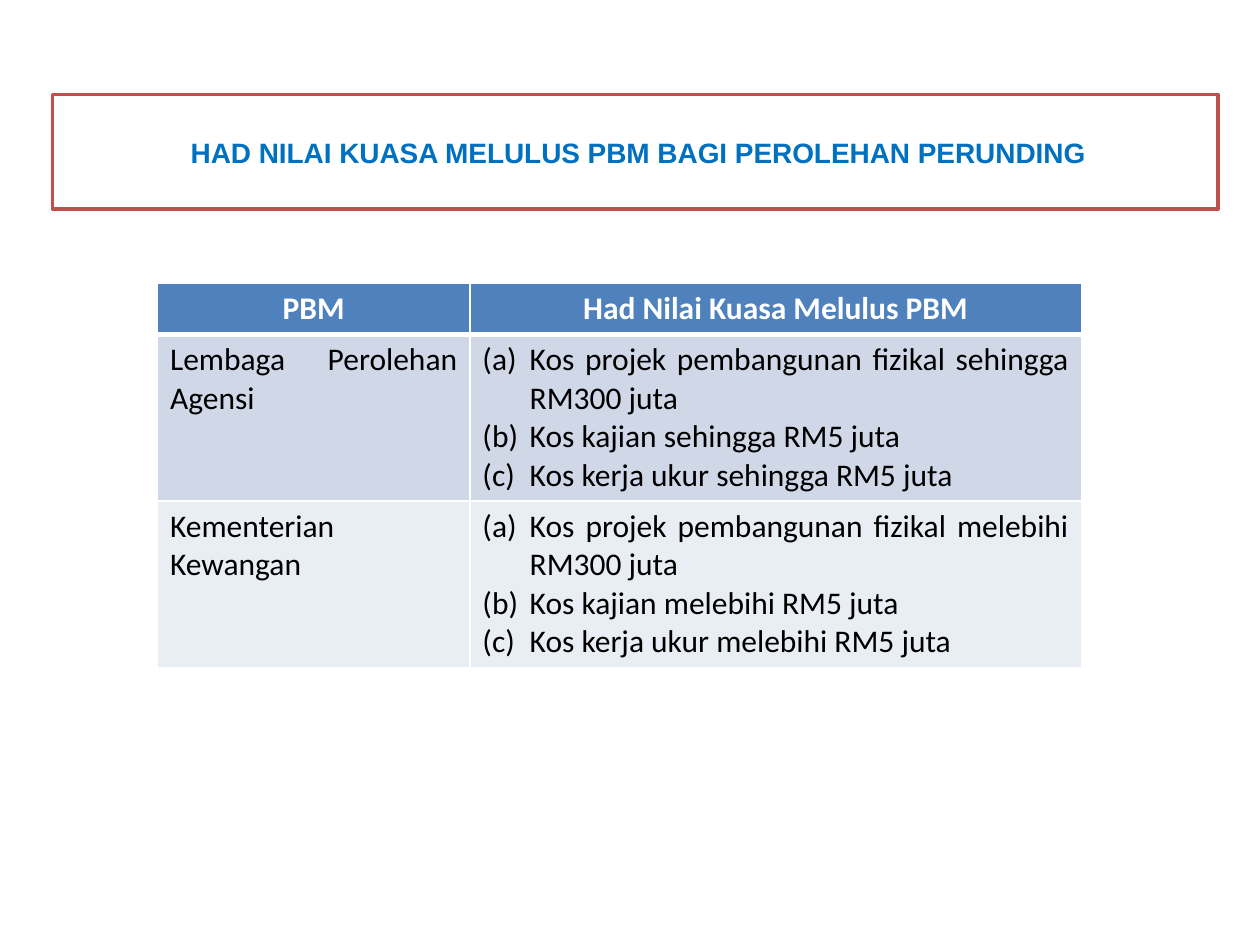
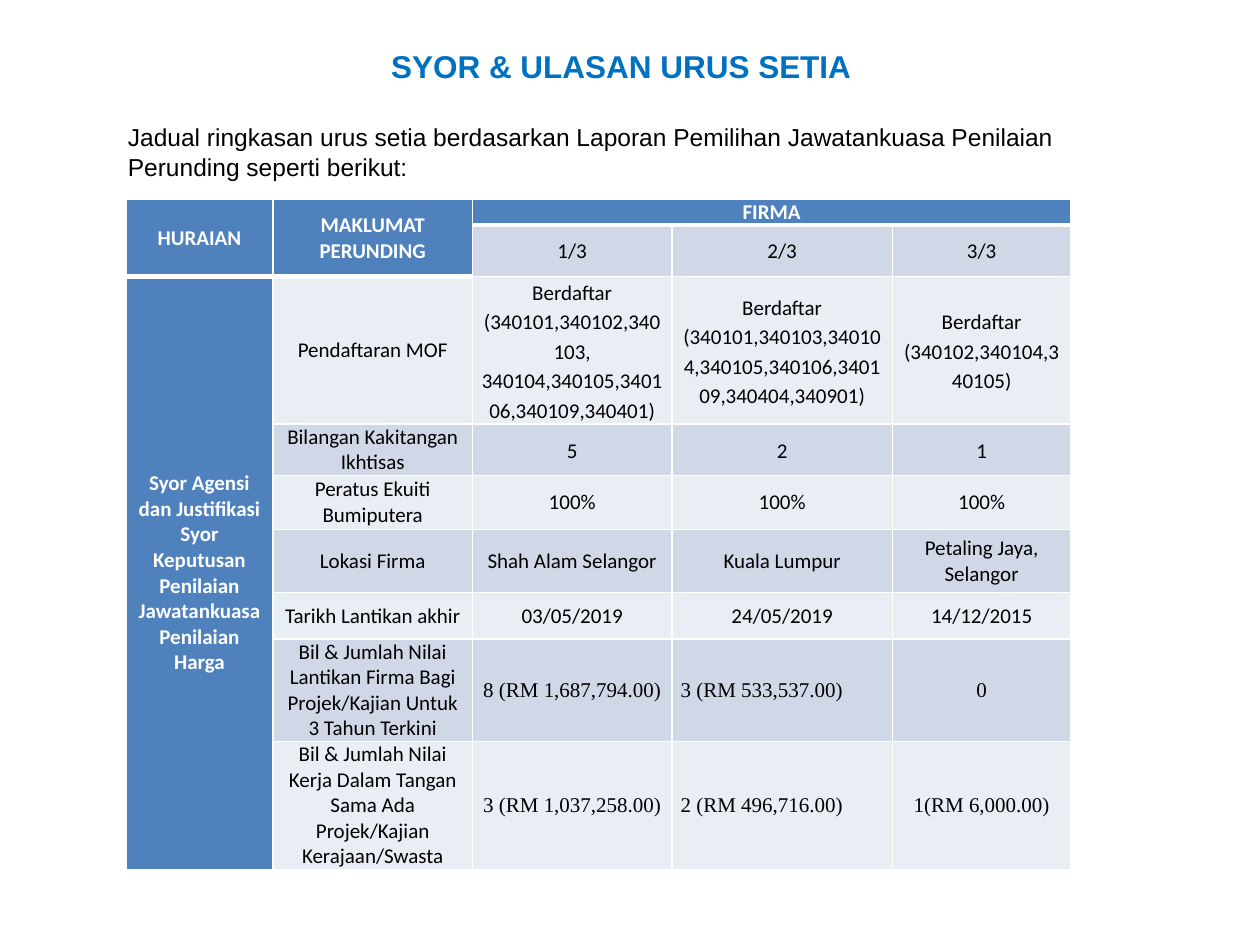
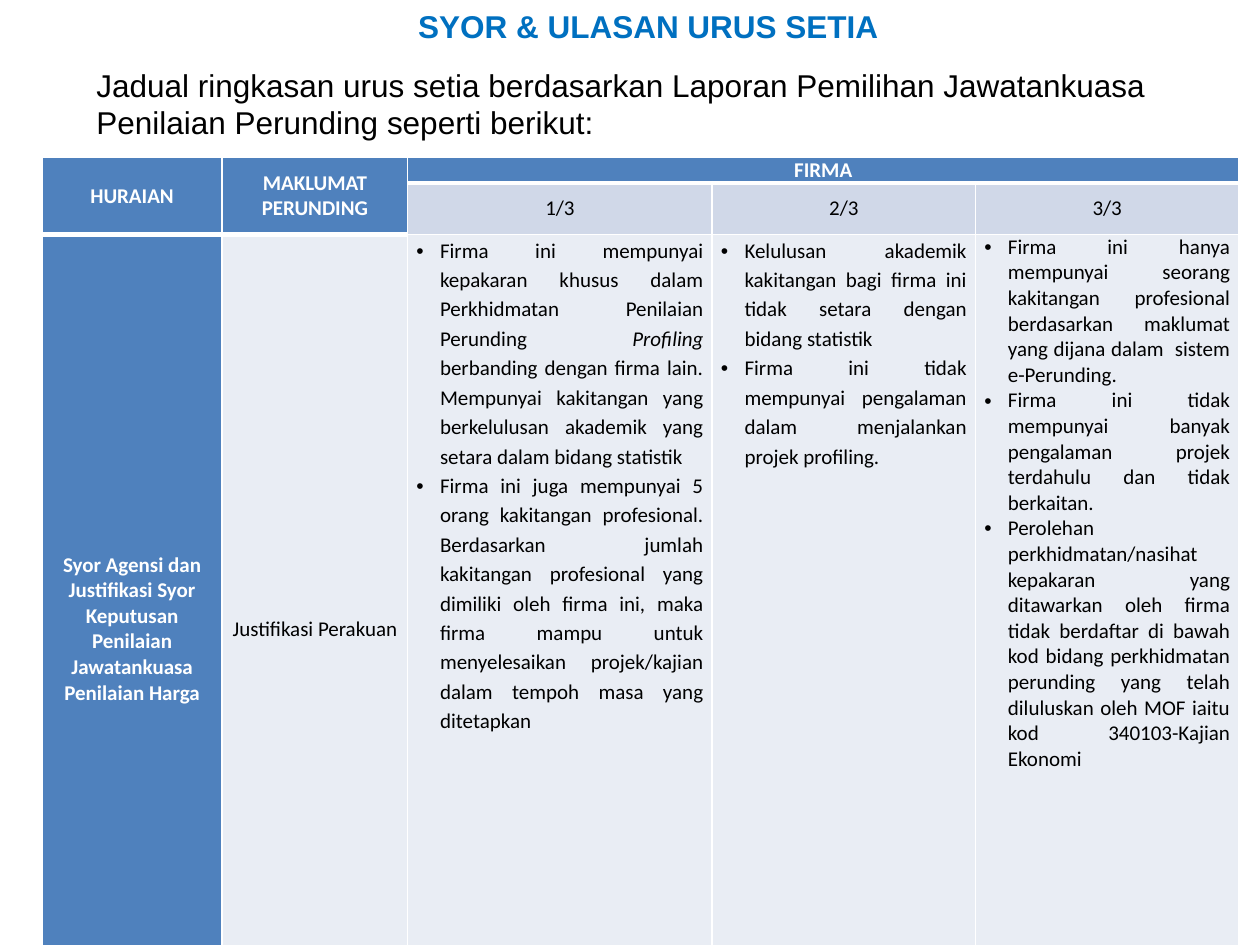
from lxml import etree
from pptx import Presentation
from pptx.dml.color import RGBColor
from pptx.enum.text import MSO_ANCHOR, MSO_AUTO_SIZE, PP_ALIGN
from pptx.oxml.ns import qn
from pptx.util import Pt

LEFT, CENTER, JUSTIFY = PP_ALIGN.LEFT, PP_ALIGN.CENTER, PP_ALIGN.JUSTIFY
TOP, MIDDLE = MSO_ANCHOR.TOP, MSO_ANCHOR.MIDDLE
NO_AUTOFIT = MSO_AUTO_SIZE.NONE

WHITE = RGBColor(0xFF, 0xFF, 0xFF)
BLACK = RGBColor(0x00, 0x00, 0x00)
TITLE_BLUE = RGBColor(0x00, 0x70, 0xC0)
FRAME_RED = RGBColor(0xC0, 0x50, 0x4D)
HEADER_BLUE = RGBColor(0x4F, 0x81, 0xBD)
BAND_DARK = RGBColor(0xD0, 0xD8, 0xE8)
BAND_LIGHT = RGBColor(0xE9, 0xED, 0xF4)

TITLE_STYLE = dict(font="Arial", color=TITLE_BLUE, bold=True, align=CENTER)
HEADER_STYLE = dict(color=WHITE, bold=True, align=CENTER)


def write(frame, text, size=12, font="Calibri", color=BLACK, bold=False,
          align=LEFT, spacing=1.0, bullet=None, numbering=None, hang=0):
    """Fill a frame with one paragraph or a list; in a tuple of runs every second is italic."""
    for i, content in enumerate(text if isinstance(text, list) else [text]):
        paragraph = frame.paragraphs[0] if i == 0 else frame.add_paragraph()
        paragraph.alignment = align
        paragraph.line_spacing = spacing
        paragraph.space_before = paragraph.space_after = Pt(0)
        if bullet or numbering:
            props = paragraph._p.get_or_add_pPr()
            props.set("marL", str(Pt(hang)))
            props.set("indent", str(-Pt(hang)))
            if bullet:
                etree.SubElement(props, qn("a:buFont")).set("typeface", "Arial")
                etree.SubElement(props, qn("a:buChar")).set("char", bullet)
            else:
                etree.SubElement(props, qn("a:buAutoNum")).set("type", numbering)
        for j, part in enumerate(content if isinstance(content, tuple) else (content,)):
            run = paragraph.add_run()
            run.text = part
            run.font.size = Pt(size)
            run.font.name = font
            run.font.bold = bold
            run.font.italic = j % 2 == 1
            run.font.color.rgb = color


def add_grid(slide, left, top, widths, heights, lead=0):
    """Add a banded table; the first `lead` columns have a header two rows high."""
    table = slide.shapes.add_table(len(heights), len(widths), Pt(left), Pt(top),
                                   Pt(sum(widths)), Pt(sum(heights))).table
    for column, width in zip(table.columns, widths):
        column.width = Pt(width)
    for row, height in zip(table.rows, heights):
        row.height = Pt(height)
    for r in range(len(heights)):
        for c in range(len(widths)):
            cell = table.cell(r, c)
            header_rows = 2 if c < lead else 1
            edges = {"L": 1, "R": 1, "T": 3 if r == header_rows else 1,
                     "B": 3 if r < header_rows else 1}
            props = cell._tc.get_or_add_tcPr()
            for edge, weight in edges.items():
                line = etree.SubElement(props, qn(f"a:ln{edge}"), w=str(Pt(weight)))
                fill = etree.SubElement(line, qn("a:solidFill"))
                etree.SubElement(fill, qn("a:srgbClr")).set("val", str(WHITE))
            cell.fill.solid()
            if r < header_rows or (lead and c == 0):
                cell.fill.fore_color.rgb = HEADER_BLUE
            else:
                cell.fill.fore_color.rgb = BAND_DARK if r % 2 else BAND_LIGHT
            if lead:
                cell.margin_left = cell.margin_right = Pt(5)
                cell.margin_top = cell.margin_bottom = Pt(0)
                cell.vertical_anchor = MIDDLE
    return table


prs = Presentation()
prs.slide_width, prs.slide_height = Pt(720), Pt(540)
title_only = prs.slide_layouts[5]

# Approval limits
slide = prs.slides.add_slide(title_only)
title = slide.shapes.title
title.left, title.top, title.width, title.height = Pt(30), Pt(54), Pt(666), Pt(65.5)
title.fill.solid()
title.fill.fore_color.rgb = WHITE
title.line.color.rgb = FRAME_RED
title.line.width = Pt(2)
title.text_frame.auto_size = NO_AUTOFIT
title.text_frame.vertical_anchor = MIDDLE
title.text_frame.margin_left = Pt(11)
write(title.text_frame, "HAD NILAI KUASA MELULUS PBM BAGI PEROLEHAN PERUNDING",
      size=16, **TITLE_STYLE)

limits = add_grid(slide, 90, 162, [178.5, 349.5], [29.2, 93.7, 93.7])
for c, heading in enumerate(["PBM", "Had Nilai Kuasa Melulus PBM"]):
    write(limits.cell(0, c).text_frame, heading, size=18, **HEADER_STYLE)
approvers = [("Lembaga Perolehan Agensi", "sehingga"), ("Kementerian Kewangan", "melebihi")]
for r, (approver, bound) in enumerate(approvers, start=1):
    write(limits.cell(r, 0).text_frame, approver, size=18, align=JUSTIFY)
    write(limits.cell(r, 1).text_frame,
          [f"Kos projek pembangunan fizikal {bound} RM300 juta",
           f"Kos kajian {bound} RM5 juta",
           f"Kos kerja ukur {bound} RM5 juta"],
          size=18, align=JUSTIFY, numbering="alphaLcParenBoth", hang=27)

# Secretariat summaries of the three firms
firm_facts = [
    ["Pendaftaran MOF",
     "Berdaftar (340101,340102,340103, 340104,340105,340106,340109,340401)",
     "Berdaftar (340101,340103,340104,340105,340106,340109,340404,340901)",
     "Berdaftar (340102,340104,340105)"],
    ["Bilangan Kakitangan Ikhtisas", "5", "2", "1"],
    ["Peratus Ekuiti Bumiputera", "100%", "100%", "100%"],
    ["Lokasi Firma", "Shah Alam Selangor", "Kuala Lumpur", "Petaling Jaya, Selangor"],
    ["Tarikh Lantikan akhir", "03/05/2019", "24/05/2019", "14/12/2015"],
    ["Bil & Jumlah Nilai Lantikan Firma Bagi Projek/Kajian Untuk 3 Tahun Terkini",
     "8 (RM 1,687,794.00)", "3 (RM 533,537.00)", "0"],
    ["Bil & Jumlah Nilai Kerja Dalam Tangan Sama Ada Projek/Kajian Kerajaan/Swasta",
     "3 (RM 1,037,258.00)", "2 (RM 496,716.00)", "1(RM 6,000.00)"],
]
justifications = [[
    "Justifikasi Perakuan",
    [("Firma ini mempunyai kepakaran khusus dalam Perkhidmatan Penilaian Perunding ",
      "Profiling ",
      "berbanding dengan firma lain. Mempunyai kakitangan yang berkelulusan akademik "
      "yang setara dalam bidang statistik"),
     "Firma ini juga mempunyai 5 orang kakitangan profesional. Berdasarkan jumlah "
     "kakitangan profesional yang dimiliki oleh firma ini, maka firma mampu untuk "
     "menyelesaikan projek/kajian dalam tempoh masa yang ditetapkan"],
    ["Kelulusan akademik kakitangan bagi firma ini tidak setara dengan bidang statistik",
     "Firma ini tidak mempunyai pengalaman dalam menjalankan projek profiling."],
    ["Firma ini hanya mempunyai seorang kakitangan profesional berdasarkan maklumat "
     "yang dijana dalam  sistem e-Perunding.",
     "Firma ini tidak mempunyai banyak pengalaman projek terdahulu dan tidak berkaitan.",
     "Perolehan perkhidmatan/nasihat kepakaran yang ditawarkan oleh firma tidak "
     "berdaftar di bawah kod bidang perkhidmatan perunding yang telah diluluskan oleh "
     "MOF iaitu kod 340103-Kajian Ekonomi"],
]]
summaries = [
    dict(title_box=(75, 23, 560, 28), intro_box=(66, 66.4, 570, 40), intro_size=14,
         corner=(72, 114), widths=[84, 114, 114, 126, 102],
         heights=[14.6, 29.5, 84, 29.5, 31, 36, 26.5, 58.6, 73.2], facts=firm_facts),
    dict(title_box=(57, 0.3, 627, 28), intro_box=(48, 34, 636, 49), intro_size=18,
         corner=(24, 90), widths=[103, 106, 174, 150.5, 150.5],
         heights=[14.6, 29.3, 451], facts=justifications),
]

for summary in summaries:
    slide = prs.slides.add_slide(title_only)
    title = slide.shapes.title
    title.left, title.top, title.width, title.height = map(Pt, summary["title_box"])
    title.text_frame.auto_size = NO_AUTOFIT
    title.text_frame.vertical_anchor = TOP
    write(title.text_frame, "SYOR & ULASAN URUS SETIA", size=18, **TITLE_STYLE)

    grid = add_grid(slide, *summary["corner"], summary["widths"], summary["heights"], lead=2)
    last_row = len(summary["heights"]) - 1
    grid.cell(0, 0).merge(grid.cell(1, 0))
    grid.cell(0, 1).merge(grid.cell(1, 1))
    grid.cell(0, 2).merge(grid.cell(0, 4))
    if last_row > 2:
        grid.cell(2, 0).merge(grid.cell(last_row, 0))
    for c, heading in enumerate(["HURAIAN", "MAKLUMAT PERUNDING", "FIRMA"]):
        write(grid.cell(0, c).text_frame, heading, **HEADER_STYLE)
    for firm in range(1, 4):
        write(grid.cell(1, firm + 1).text_frame, f"{firm}/3", align=CENTER)
    write(grid.cell(2, 0).text_frame,
          ["Syor Agensi dan Justifikasi Syor",
           "Keputusan Penilaian Jawatankuasa Penilaian Harga"], **HEADER_STYLE)

    for r, (label, *values) in enumerate(summary["facts"], start=2):
        write(grid.cell(r, 1).text_frame, label, align=CENTER)
        for c, value in enumerate(values, start=2):
            cell = grid.cell(r, c)
            if isinstance(value, list):
                cell.vertical_anchor = TOP
                write(cell.text_frame, value, align=JUSTIFY, bullet="•", hang=13.5,
                      spacing=1.0 if c == 4 else 1.15)
            elif r >= 7:
                write(cell.text_frame, value, font="Times New Roman",
                      align=LEFT if c == 3 else CENTER)
            else:
                write(cell.text_frame, value, align=CENTER, spacing=1.15 if r < 4 else 1.0)

    intro = slide.shapes.add_textbox(*map(Pt, summary["intro_box"])).text_frame
    intro.word_wrap = True
    write(intro, "Jadual ringkasan urus setia berdasarkan Laporan Pemilihan Jawatankuasa "
          "Penilaian Perunding seperti berikut:", size=summary["intro_size"], font="Arial")

prs.save("out.pptx")
